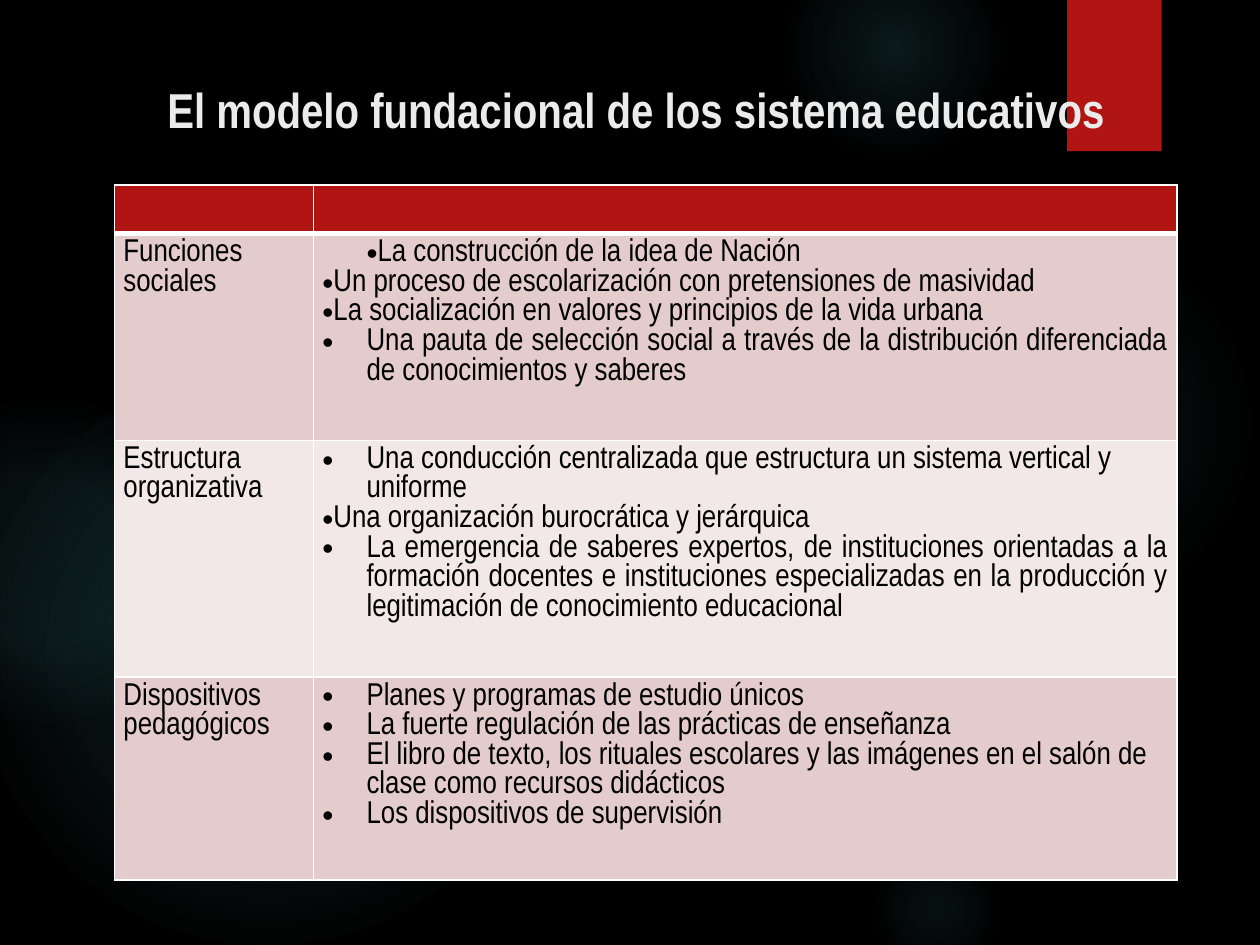
from pptx import Presentation
from pptx import oxml
from pptx import util as u
from pptx.dml.color import RGBColor
from pptx.enum import shapes, text
from pptx.oxml import ns

FONT = "Arial Narrow"
RED, WHITE, BLACK, GLOW = "B01513", "FFFFFF", "000000", "50B9C1"
BANDS = ["E4CCCC", "F2E8E7"]
HANGING, FLUSH, NUDGED, INDENTED = (0.35, -0.35), (0, -0.35), (0.04, -0.35), (0, 0.35)

GLOWS = [
    (6.89, 1.83, 3.08, [(0, 7), (36, 6), (69, 0)]),
    (6.22, -0.5, 1.75, [(0, 14), (36, 7), (73, 0)]),
    (6.89, 6.67, 1.08, [(0, 9), (36, 5), (66, 0)]),
    (-0.17, 2.92, 4.58, [(0, 11), (36, 10), (75, 0)]),
    (-0.92, 3.17, 2.58, [(0, 8), (36, 8), (72, 0)]),
]

ROWS = [
    ("Funciones sociales", [
        ("La construcción de la idea de Nación", INDENTED, False),
        ("Un proceso de escolarización con pretensiones de masividad", FLUSH, False),
        ("La socialización en valores y principios de la vida urbana", FLUSH, False),
        ("Una pauta de selección social a través de la distribución diferenciada "
         "de conocimientos y saberes", HANGING, True),
    ]),
    ("Estructura organizativa", [
        ("Una conducción centralizada que estructura un sistema vertical y uniforme",
         HANGING, False),
        ("Una organización burocrática y jerárquica", NUDGED, False),
        ("La emergencia de saberes expertos, de instituciones orientadas a la formación "
         "docentes e instituciones especializadas en la producción y legitimación de "
         "conocimiento educacional ", HANGING, True),
    ]),
    ("Dispositivos pedagógicos", [
        ("Planes y programas de estudio únicos", HANGING, False),
        ("La fuerte regulación de las prácticas de enseñanza", HANGING, False),
        ("El libro de texto, los rituales escolares y las imágenes en el salón de clase "
         "como recursos didácticos", HANGING, False),
        ("Los dispositivos de supervisión", HANGING, False),
    ]),
]


def color(value):
    """Turn a hex string into a colour."""
    return RGBColor.from_string(value)


def element(markup):
    """Parse one drawing element, declaring its namespace."""
    tag, rest = markup[1:].split(" ", 1)
    return oxml.parse_xml(f"<{tag} {ns.nsdecls('a')} {rest}")


def write(para, wording, size=18, ink=BLACK, bold=False, align=None, indent=None):
    """Put formatted wording in a paragraph, bulleted when an indent is given."""
    if indent:
        props = para._p.get_or_add_pPr()
        props.set("marL", str(u.Inches(indent[0])))
        props.set("indent", str(u.Inches(indent[1])))
        props.append(element('<a:buFont typeface="Arial"/>'))
        props.append(element('<a:buChar char="•"/>'))
    para.alignment = align
    span = para.add_run()
    span.text = wording
    span.font.name, span.font.size, span.font.bold = FONT, u.Pt(size), bold
    span.font.color.rgb = color(ink)


class Slide:
    """Holds the current slide and draws each kind of element on it."""

    def __init__(self, page):
        """Keep the page and paint its background."""
        self.page = page
        page.background.fill.solid()
        page.background.fill.fore_color.rgb = color(BLACK)

    def shape(self, kind, left, top, width, height):
        """Add a preset shape with neither outline nor shadow."""
        shape = self.page.shapes.add_shape(
            kind, *map(u.Inches, (left, top, width, height)))
        shape.shadow.inherit = False
        shape.line.fill.background()
        return shape

    def glow(self, left, top, size, stops):
        """Add a circle that fades towards its rim."""
        circle = self.shape(shapes.MSO_SHAPE.OVAL, left, top, size, size)
        marks = "".join(
            f'<a:gs pos="{place * 1000}"><a:srgbClr val="{GLOW}">'
            f'<a:alpha val="{alpha * 1000}"/></a:srgbClr></a:gs>'
            for place, alpha in stops)
        circle.element.spPr.insert(2, element(
            f'<a:gradFill rotWithShape="1"><a:gsLst>{marks}</a:gsLst><a:path path="circle">'
            '<a:fillToRect l="50000" t="50000" r="50000" b="50000"/></a:path></a:gradFill>'))

    def ribbon(self, left, top, width, height):
        """Add the red ribbon with its soft shadow."""
        ribbon = self.shape(shapes.MSO_SHAPE.RECTANGLE, left, top, width, height)
        ribbon.fill.solid()
        ribbon.fill.fore_color.rgb = color(RED)
        ribbon.element.spPr.find(ns.qn("a:effectLst")).append(element(
            f'<a:outerShdw blurRad="{u.Pt(3)}" dist="{u.Pt(2)}" dir="5400000" '
            f'rotWithShape="0"><a:srgbClr val="{BLACK}"><a:alpha val="45000"/>'
            '</a:srgbClr></a:outerShdw>'))

    def title(self, wording, left, top, width, height):
        """Fill the title placeholder and bring it to the front."""
        box = self.page.shapes.title
        box.left, box.top, box.width, box.height = map(
            u.Inches, (left, top, width, height))
        frame = box.text_frame
        frame.word_wrap = True
        frame.auto_size = text.MSO_AUTO_SIZE.NONE
        frame.vertical_anchor = text.MSO_ANCHOR.MIDDLE
        frame.margin_top, frame.margin_bottom = u.Inches(0.05), u.Inches(0.13)
        write(frame.paragraphs[0], wording, size=28, ink="EBEBEB", bold=True,
              align=text.PP_ALIGN.CENTER)
        box.element.getparent().append(box.element)

    def cell(self, cell, fill, top=1, bottom=1):
        """Set the margins, borders and fill of a table cell."""
        cell.margin_left = cell.margin_right = u.Inches(0.07)
        cell.margin_top = cell.margin_bottom = u.Inches(0.04)
        props = cell._tc.get_or_add_tcPr()
        for side, width in zip("LRTB", (1, 1, top, bottom)):
            props.append(element(
                f'<a:ln{side} w="{u.Pt(width)}"><a:solidFill><a:srgbClr val="{WHITE}"/>'
                f'</a:solidFill></a:ln{side}>'))
        cell.fill.solid()
        cell.fill.fore_color.rgb = color(fill)

    def table(self, left, top, widths, heights, rows):
        """Add the table: an empty header, then a label and a list in each row."""
        table = self.page.shapes.add_table(
            len(heights), len(widths),
            *map(u.Inches, (left, top, sum(widths), sum(heights)))).table
        table.first_row = table.horz_banding = False
        for column, width in zip(table.columns, widths):
            column.width = u.Inches(width)
        for row, height in zip(table.rows, heights):
            row.height = u.Inches(height)
        for cell in table.rows[0].cells:
            self.cell(cell, RED, bottom=3)
        for index, (label, items) in enumerate(rows):
            label_cell, list_cell = table.rows[index + 1].cells
            for cell in (label_cell, list_cell):
                self.cell(cell, BANDS[index % 2], top=1 if index else 3)
            write(label_cell.text_frame.paragraphs[0], label)
            frame = list_cell.text_frame
            for number, (wording, indent, justified) in enumerate(items):
                para = frame.add_paragraph() if number else frame.paragraphs[0]
                write(para, wording, indent=indent,
                      align=text.PP_ALIGN.JUSTIFY if justified else None)


def main():
    """Build the slide and save the deck."""
    deck = Presentation()
    deck.slide_width, deck.slide_height = u.Inches(10), u.Inches(7.5)
    slide = Slide(deck.slides.add_slide(deck.slide_layouts[5]))
    for glow in GLOWS:
        slide.glow(*glow)
    slide.ribbon(8.47, 0, 0.75, 1.2)
    slide.title("El modelo fundacional de los sistema educativos", 0.91, 0.52, 8.27, 0.77)
    slide.table(0.91, 1.47, [1.58, 6.85], [0.38, 1.64, 1.88, 1.61], ROWS)
    deck.save("out.pptx")


if __name__ == "__main__":
    main()
